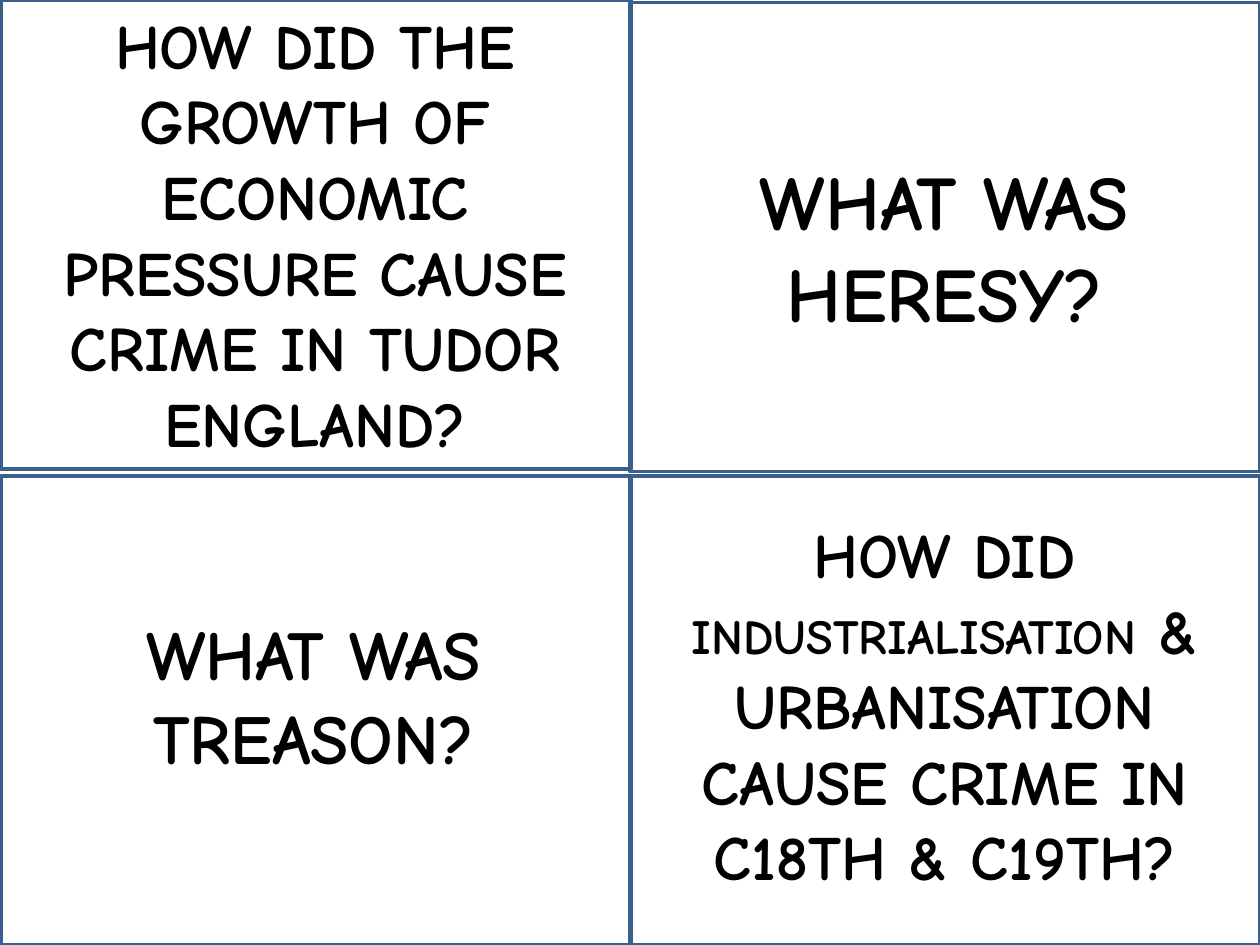
from pptx import Presentation
from pptx.util import Pt
from pptx.dml.color import RGBColor
from pptx.enum.shapes import MSO_SHAPE as SHAPE
from pptx.enum.text import PP_ALIGN as ALIGN, MSO_AUTO_SIZE as AUTO


def rgb(value):
    return RGBColor.from_string(value)


prs = Presentation()
prs.slide_width, prs.slide_height = Pt(720), Pt(540)
s = prs.slides.add_slide(prs.slide_layouts[6])

card_w, card_h = 360, 268
lower = 540 - card_h
for x, y in [(360, 1.5), (360, lower), (0.5, 0), (0.5, lower)]:
    sp = s.shapes.add_shape(SHAPE.RECTANGLE, Pt(x), Pt(y), Pt(card_w), Pt(card_h))
    sp.shadow.inherit = False
    sp.fill.background()
    sp.line.color.rgb = rgb("3A5F8C")
    sp.line.width = Pt(2)

questions = [
    ((0, 0, 360, 269.5),
     [("HOW DID THE GROWTH OF ECONOMIC PRESSURE CAUSE CRIME IN TUDOR ENGLAND?", 36)]),
    ((372, 84, 335.5, 114), [("WHAT WAS HERESY?", 44)]),
    ((11.5, 345.5, 335.5, 104.5), [("WHAT WAS TREASON?", 40)]),
    ((360, 291, 359.5, 225.5),
     [("HOW DID ", 36), ("INDUSTRIALISATION", 28),
      (" & URBANISATION CAUSE CRIME IN C18TH & C19TH?", 36)]),
]
for box, runs in questions:
    tf = s.shapes.add_textbox(*map(Pt, box)).text_frame
    tf.word_wrap = True
    tf.auto_size = AUTO.SHAPE_TO_FIT_TEXT
    p = tf.paragraphs[0]
    p.alignment = ALIGN.CENTER
    for text, size in runs:
        r = p.add_run()
        r.text = text
        r.font.color.rgb = rgb("000000")
        for name, value in {"name": "Comic Neue", "size": Pt(size), "bold": True}.items():
            setattr(r.font, name, value)

prs.save("out.pptx")
